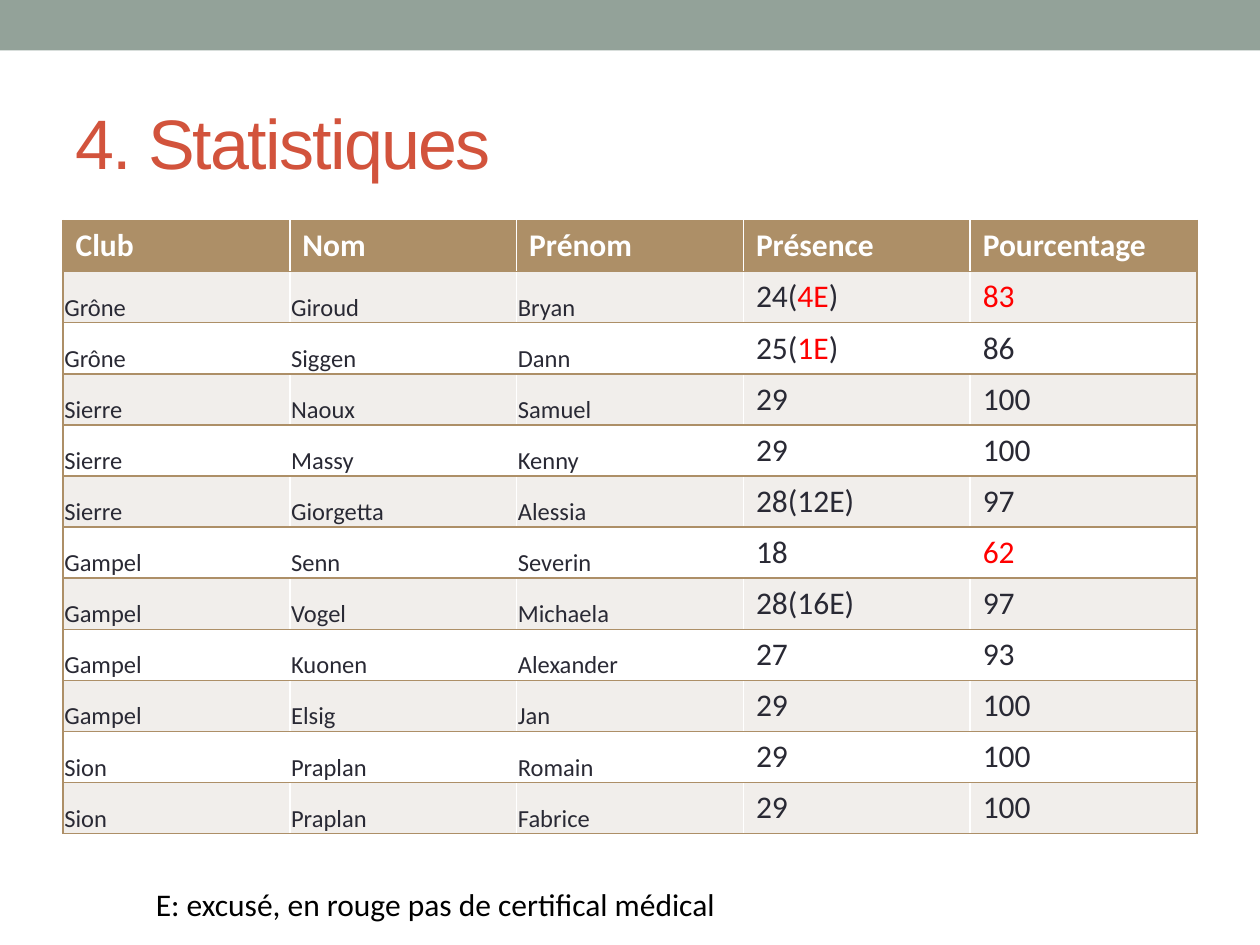
import pptx
import pptx.util
import pptx.dml.color
import pptx.enum.shapes
import pptx.enum.text
import pptx.oxml

Pt = pptx.util.Pt
RGBColor = pptx.dml.color.RGBColor
ANCHOR = pptx.enum.text.MSO_ANCHOR

SAGE = RGBColor(0x93, 0xA2, 0x99)
BRICK = RGBColor(0xD2, 0x53, 0x3C)
TAN = RGBColor(0xAD, 0x8F, 0x67)
PALE = RGBColor(0xF1, 0xEE, 0xEB)
WHITE = RGBColor(0xFF, 0xFF, 0xFF)
INK = RGBColor(0x29, 0x29, 0x34)
RED = RGBColor(0xFF, 0x00, 0x00)
BLACK = RGBColor(0x00, 0x00, 0x00)

HEADERS = ["Club", "Nom", "Prénom", "Présence", "Pourcentage"]
MEMBERS = [
    ("Grône", "Giroud", "Bryan", [("24(", INK), ("4E", RED), (")", INK)], [("83", RED)]),
    ("Grône", "Siggen", "Dann", [("25(", INK), ("1E", RED), (")", INK)], "86"),
    ("Sierre", "Naoux", "Samuel", "29", "100"),
    ("Sierre", "Massy", "Kenny", "29", "100"),
    ("Sierre", "Giorgetta", "Alessia", "28(12E)", "97"),
    ("Gampel", "Senn", "Severin", "18", [("62", RED)]),
    ("Gampel", "Vogel", "Michaela", "28(16E)", "97"),
    ("Gampel", "Kuonen", "Alexander", "27", "93"),
    ("Gampel", "Elsig", "Jan", "29", "100"),
    ("Sion", "Praplan", "Romain", "29", "100"),
    ("Sion", "Praplan", "Fabrice", "29", "100"),
]
NAME_COLUMNS = 3


def add_run(p, text, size, color, font="Calibri", bold=False):
    r = p.add_run()
    r.text = text
    r.font.size = Pt(size)
    r.font.name = font
    r.font.bold = bold
    r.font.color.rgb = color
    return r


def set_borders(cell, sides):
    tcPr = cell._tc.get_or_add_tcPr()
    for i, side in enumerate(sides):
        tcPr.insert(i, pptx.oxml.parse_xml(
            f'<a:ln{side} xmlns:a="http://schemas.openxmlformats.org/drawingml/2006/main" '
            f'w="{Pt(1)}"><a:solidFill><a:srgbClr val="{TAN}"/></a:solidFill></a:ln{side}>'))


def add_band(s, x, y, w, h):
    sp = s.shapes.add_shape(pptx.enum.shapes.MSO_SHAPE.RECTANGLE, Pt(x), Pt(y), Pt(w), Pt(h))
    sp.shadow.inherit = False
    sp.fill.solid()
    sp.fill.fore_color.rgb = SAGE
    sp.line.fill.background()


def add_title(s, x, y, w, h):
    sp = s.shapes.title
    sp.left, sp.top, sp.width, sp.height = Pt(x), Pt(y), Pt(w), Pt(h)
    tf = sp.text_frame
    tf.vertical_anchor = ANCHOR.MIDDLE
    p = tf.paragraphs[0]
    p.alignment = pptx.enum.text.PP_ALIGN.LEFT
    r = add_run(p, "4. Statistiques", 40, BRICK, "Arial")
    r._r.get_or_add_rPr().set("spc", "-100")


def fill_cell(cell, content, row, col):
    header = row == 0
    name = not header and col < NAME_COLUMNS
    color = WHITE if header else INK
    if name:
        cell.vertical_anchor = ANCHOR.BOTTOM
        cell.margin_left = cell.margin_right = cell.margin_top = Pt(0.75)
        cell.margin_bottom = Pt(0)
    runs = [(content, color)] if isinstance(content, str) else content
    for text, run_color in runs:
        add_run(cell.text_frame.paragraphs[0], text, 14 if name else 18, run_color, bold=header)
    cell.fill.solid()
    cell.fill.fore_color.rgb = TAN if header else PALE if row % 2 else WHITE


def add_attendance(s, x, y, w, h):
    rows = [HEADERS] + MEMBERS
    last = len(HEADERS) - 1
    table = s.shapes.add_table(len(rows), len(HEADERS), Pt(x), Pt(y), Pt(w), Pt(h)).table
    for row, values in enumerate(rows):
        for col, content in enumerate(values):
            cell = table.cell(row, col)
            fill_cell(cell, content, row, col)
            set_borders(cell, ("L" if col == 0 else "") + ("R" if col == last else "") + "TB")


def add_legend(s, x, y, w, h):
    tf = s.shapes.add_textbox(Pt(x), Pt(y), Pt(w), Pt(h)).text_frame
    tf.word_wrap = False
    tf.auto_size = pptx.enum.text.MSO_AUTO_SIZE.SHAPE_TO_FIT_TEXT
    add_run(tf.paragraphs[0], "E: excusé, en rouge pas de certifical médical", 18, BLACK)


def main():
    prs = pptx.Presentation()
    prs.slide_width, prs.slide_height = Pt(720), Pt(540)
    s = prs.slides.add_slide(prs.slide_layouts[5])
    add_band(s, 0, 0, 720, 28.8)
    add_title(s, 36, 42, 648, 78)
    add_attendance(s, 36, 126, 648, 350.4)
    add_legend(s, 82, 502, 338.4, 29)
    prs.save("out.pptx")


if __name__ == "__main__":
    main()
